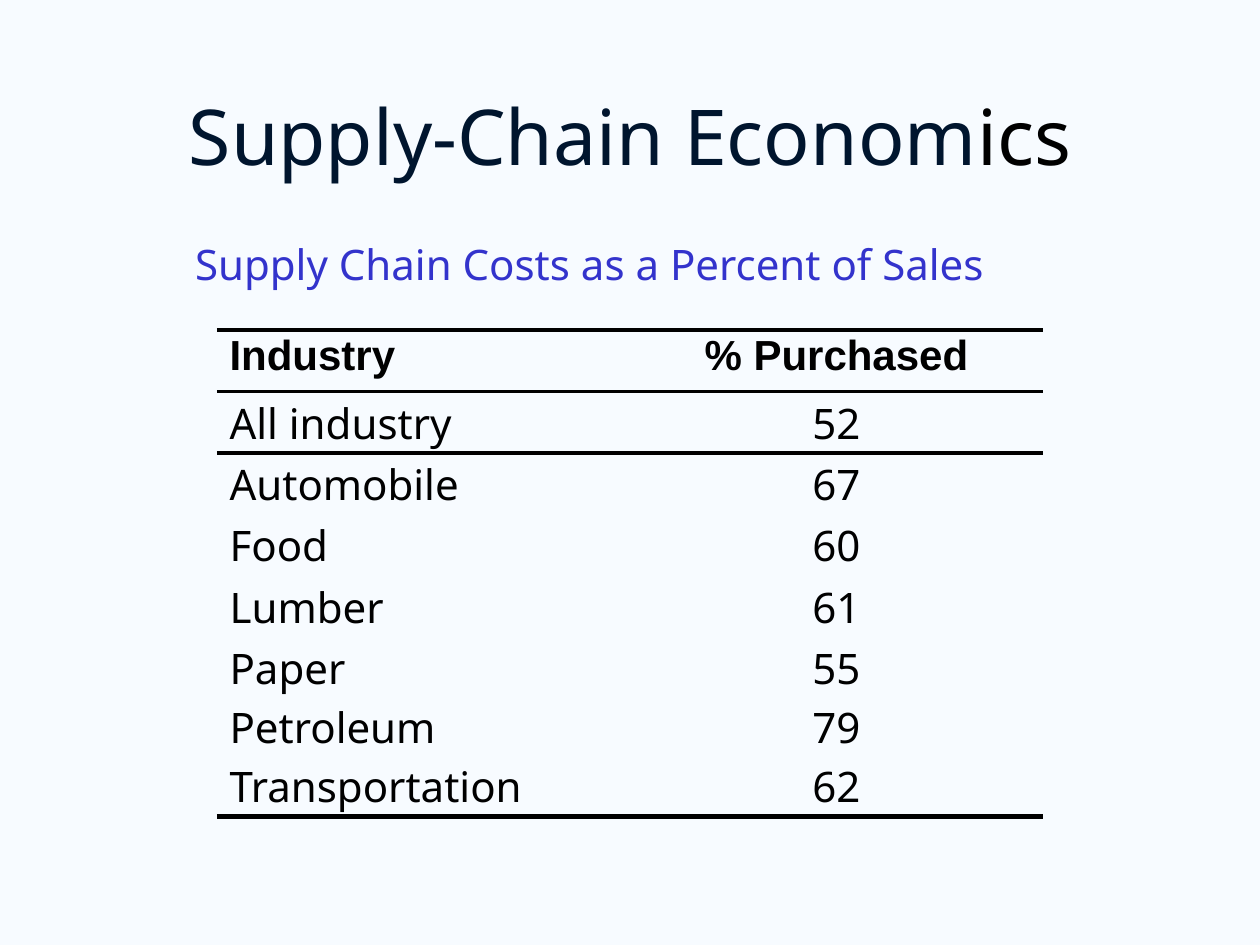
from pptx import Presentation
from pptx.dml.color import RGBColor
from pptx.enum.text import MSO_ANCHOR as Anchor, MSO_AUTO_SIZE as AutoSize, PP_ALIGN as Align
from pptx.oxml import parse_xml
from pptx.oxml.ns import nsdecls
from pptx.util import Pt

INK = "000000"
NO_GRID_STYLE = "{2D5ABB26-0587-4C30-8999-92F81FD0307C}"
INDUSTRIES = [
    ("All industry", 52),
    ("Automobile", 67),
    ("Food", 60),
    ("Lumber", 61),
    ("Paper", 55),
    ("Petroleum", 79),
    ("Transportation", 62),
]


def color(value):
    """Turn a hex string into a colour."""
    return RGBColor.from_string(value)


def assign(target, **values):
    """Set several attributes of one object."""
    for name, value in values.items():
        setattr(target, name, value)


def write(para, spans, size, align=Align.LEFT, spacing=0.9, font="Noto Sans", bold=False):
    """Fill a paragraph with coloured spans of text."""
    assign(para, alignment=align, line_spacing=spacing)
    for text, shade in spans:
        span = para.add_run()
        span.text = text
        assign(span.font, name=font, size=Pt(size), bold=bold)
        span.font.color.rgb = color(shade)


def add_text(page, box, spans, size, frame_format, **text_format):
    """Place a wrapped line of text in the given box."""
    frame = page.shapes.add_textbox(*map(Pt, box)).text_frame
    assign(frame, word_wrap=True, **frame_format)
    write(frame.paragraphs[0], spans, size, **text_format)


def add_rule(cell, side, width):
    """Draw a solid rule on the side lnT or lnB of a cell."""
    rule = parse_xml(
        f'<a:{side} {nsdecls("a")} w="{Pt(width)}"><a:solidFill>'
        f'<a:srgbClr val="{INK}"/></a:solidFill></a:{side}>'
    )
    fill = cell.fill._xPr.find("{*}noFill")
    fill.addprevious(rule)


def add_cost_table(page, box, heading, rows, heights):
    """Build the ruled table of purchase shares in the given box."""
    table = page.shapes.add_table(len(rows) + 1, len(heading), *map(Pt, box)).table
    assign(table, first_row=False, horz_banding=False)
    table._tbl.tblPr.find("{*}tableStyleId").text = NO_GRID_STYLE
    for row, height in zip(table.rows, heights):
        row.height = Pt(height)
    rules = {0: {"lnT": 3, "lnB": 2.25}, 1: {"lnT": 2.25}, len(rows): {"lnB": 3}}
    for row_index, values in enumerate([heading, *rows]):
        style = {"font": "Arial", "bold": True} if row_index == 0 else {}
        for column, value in enumerate(values):
            cell = table.cell(row_index, column)
            cell.fill.background()
            align = Align.CENTER if column else Align.LEFT
            write(cell.text_frame.paragraphs[0], [(str(value), INK)], 24, align, **style)
            for side, width in rules.get(row_index, {}).items():
                add_rule(cell, side, width)


def main():
    """Build and save the deck."""
    deck = Presentation()
    assign(deck, slide_width=Pt(720), slide_height=Pt(540))
    page = deck.slides.add_slide(deck.slide_layouts[6])
    page.background.fill.solid()
    page.background.fill.fore_color.rgb = color("F7FBFF")
    add_text(page, (54, 46, 612, 70), [("Supply-Chain Econom", "00152E"), ("ics", INK)], 44,
             {"vertical_anchor": Anchor.MIDDLE}, align=Align.CENTER, spacing=0.85)
    add_text(page, (104.4, 136, 511, 33), [("Supply Chain Costs as a Percent of Sales", "3333CC")],
             24, {"auto_size": AutoSize.SHAPE_TO_FIT_TEXT})
    heights = [35.1] * 5 + [33.7] * 2 + [35.1]
    add_cost_table(page, (124, 188.6, 472, sum(heights)), ("Industry", "% Purchased"),
                   INDUSTRIES, heights)
    deck.save("out.pptx")


if __name__ == "__main__":
    main()
